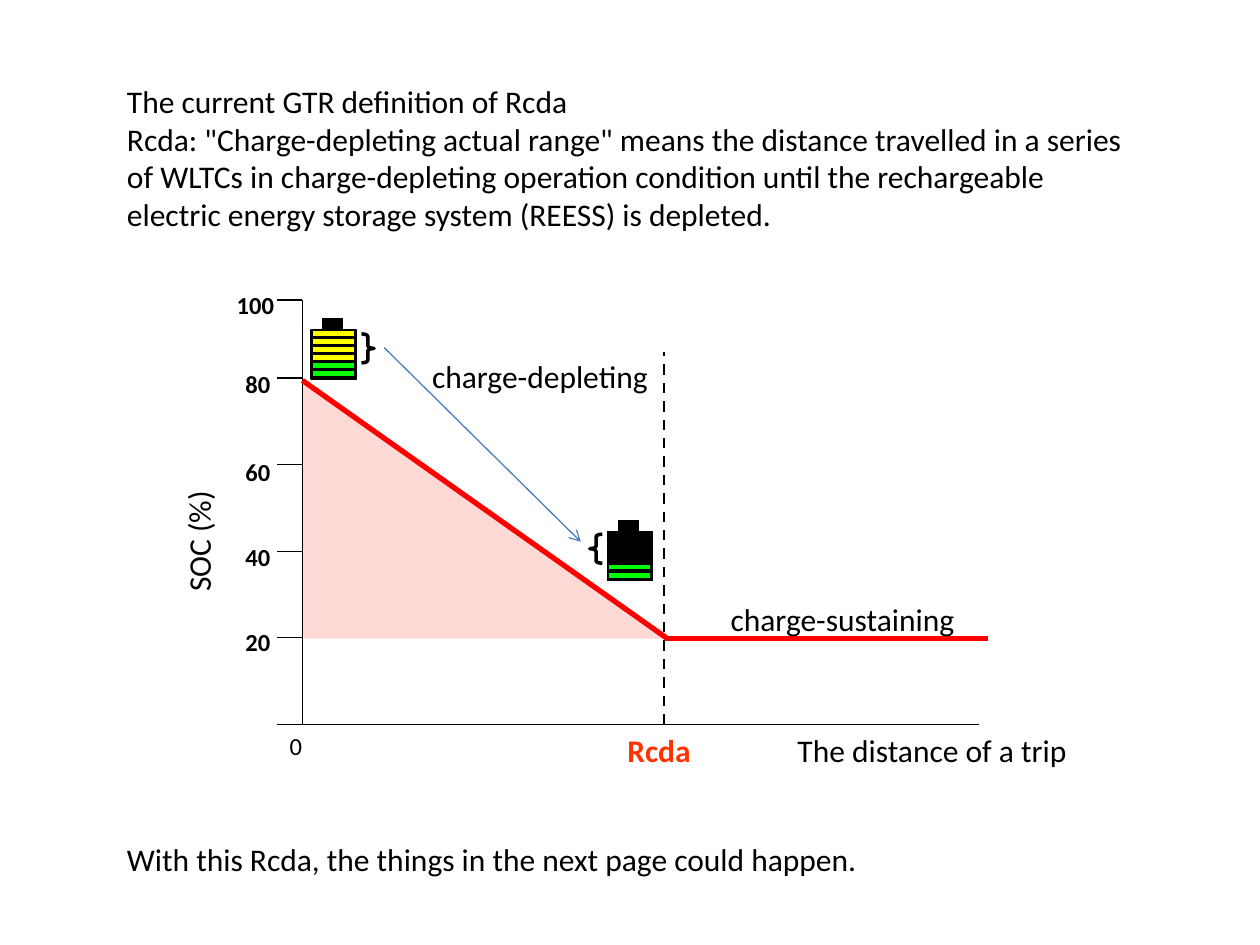
from lxml.etree import SubElement
from pptx import Presentation
from pptx.dml.color import RGBColor
from pptx.enum.dml import MSO_LINE
from pptx.enum.shapes import MSO_CONNECTOR, MSO_SHAPE
from pptx.enum.text import MSO_AUTO_SIZE
from pptx.oxml.ns import qn
from pptx.util import Pt

BLACK = RGBColor(0x00, 0x00, 0x00)
RED = RGBColor(0xFF, 0x00, 0x00)
ORANGE_RED = RGBColor(0xFF, 0x33, 0x00)
PINK = RGBColor(0xFE, 0xD9, 0xD6)
GREEN = RGBColor(0x00, 0xFF, 0x00)
YELLOW = RGBColor(0xFF, 0xFF, 0x00)
BLUE = RGBColor(0x4B, 0x7E, 0xBC)

DEFINITION = [
    "The current GTR definition of Rcda",
    'Rcda: "Charge-depleting actual range" means the distance travelled in a series '
    "of WLTCs in charge-depleting operation condition until the rechargeable "
    "electric energy storage system (REESS) is depleted.",
]
CLOSING = ["With this Rcda, the things in the next page could happen."]
CAPTIONS = [
    ("The distance of a trip", 448.6, 414, 184.3),
    ("charge-depleting", 239.8, 200.2, 139.7),
    ("charge-sustaining", 410.4, 339.1, 144),
]
SOC_LABELS = [
    ("20", 133.2, 355),
    ("40", 133.2, 306),
    ("60", 133.2, 257.8),
    ("80", 133.2, 207.4),
    ("100", 128.2, 162),
]
BATTERIES = [
    (177.8, 188.6, [GREEN, GREEN, YELLOW, YELLOW, YELLOW, YELLOW]),
    (347, 303.8, [GREEN, GREEN]),
]
BRACES = [
    (MSO_SHAPE.RIGHT_BRACE, 206.6, 190.8),
    (MSO_SHAPE.LEFT_BRACE, 337, 305.3),
]

AXIS_X, AXIS_TOP, AXIS_BASE, AXIS_END = 172.8, 171.4, 414, 559.4
TICK_LENGTH, TICK_STEP = 14.4, 49.5
RCDA_X, TRIP_END = 380, 564.5
START_Y, SUSTAIN_Y = 217.4, 365
CELL_STEP = 4.6

deck = Presentation()
deck.slide_width, deck.slide_height = Pt(720), Pt(540)
slide = deck.slides.add_slide(deck.slide_layouts[6])


def add_text(paragraphs, left, top, width, height=28.8, size=18,
             color=BLACK, bold=False, wrap=False):
    box = slide.shapes.add_textbox(Pt(left), Pt(top), Pt(width), Pt(height))
    frame = box.text_frame
    frame.word_wrap = wrap
    frame.auto_size = MSO_AUTO_SIZE.SHAPE_TO_FIT_TEXT
    frame.text = "\n".join(paragraphs)
    for paragraph in frame.paragraphs:
        font = paragraph.font
        font.name, font.size, font.bold = "Calibri", Pt(size), bold
        font.color.rgb = color
    return box


def add_line(x1, y1, x2, y2, color=BLACK, weight=0.75):
    line = slide.shapes.add_connector(
        MSO_CONNECTOR.STRAIGHT, Pt(x1), Pt(y1), Pt(x2), Pt(y2))
    line.line.color.rgb = color
    line.line.width = Pt(weight)
    SubElement(line._element.spPr, qn("a:effectLst"))
    return line


def add_shape(parent, preset, left, top, width, height, fill=None, outline=0.75):
    shape = parent.shapes.add_shape(preset, Pt(left), Pt(top), Pt(width), Pt(height))
    shape.shadow.inherit = False
    if fill is None:
        shape.fill.background()
    else:
        shape.fill.solid()
        shape.fill.fore_color.rgb = fill
    if outline:
        shape.line.color.rgb = BLACK
        shape.line.width = Pt(outline)
    else:
        shape.line.fill.background()
    return shape


def add_battery(left, top, cells):
    battery = slide.shapes.add_group_shape()
    add_shape(battery, MSO_SHAPE.RECTANGLE, left, top, 26, 28, BLACK)
    add_shape(battery, MSO_SHAPE.RECTANGLE, left + 6.5, top - 6.5, 11.5, 8, BLACK)
    for level, color in enumerate(cells):
        add_shape(battery, MSO_SHAPE.RECTANGLE, left + 0.7,
                  top + CELL_STEP * (5 - level), 24, 3.6, color)


add_text(DEFINITION, 65.5, 43.2, 593.3, 94.3, wrap=True)
add_shape(slide, MSO_SHAPE.RIGHT_TRIANGLE, AXIS_X, START_Y,
          RCDA_X + 1 - AXIS_X, SUSTAIN_Y - START_Y, PINK, outline=0)

add_line(AXIS_X, AXIS_TOP, AXIS_X, AXIS_BASE)
add_line(AXIS_X, AXIS_BASE, AXIS_END, AXIS_BASE)
for tick_y in [AXIS_BASE - TICK_STEP * i for i in range(5)] + [AXIS_TOP]:
    add_line(AXIS_X - TICK_LENGTH, tick_y, AXIS_X, tick_y)
for label, left, top in SOC_LABELS:
    add_text([label], left, top, 64, 24.5, size=14, bold=True, wrap=True)
add_text(["SOC (%)"], 69.8, 287.3, 87.1).rotation = 270
add_text(["0"], 158.4, AXIS_BASE, 22.3, 24.5, size=14)
add_text(["Rcda"], 351.4, AXIS_BASE, 59, color=ORANGE_RED, bold=True)

rcda_marker = add_line(RCDA_X - 0.6, AXIS_BASE, RCDA_X - 0.6, 200.9, weight=1.5)
rcda_marker.line.dash_style = MSO_LINE.DASH
add_line(AXIS_X, START_Y, RCDA_X + 1.5, SUSTAIN_Y, RED, 3)
add_line(RCDA_X, SUSTAIN_Y, TRIP_END, SUSTAIN_Y, RED, 3)

for battery in BATTERIES:
    add_battery(*battery)
for preset, left, top in BRACES:
    brace = add_shape(slide, preset, left, top, 7.2, 16.6, outline=2)
    brace.adjustments[0] = 0.2
depletion_arrow = add_line(219.6, 198.7, 331.9, 309.6, BLUE)
SubElement(depletion_arrow.line._get_or_add_ln(), qn("a:tailEnd"), type="arrow")

for caption, left, top, width in CAPTIONS:
    add_text([caption], left, top, width)
add_text(CLOSING, 65.5, 476.6, 593.3, wrap=True)

deck.save("out.pptx")
